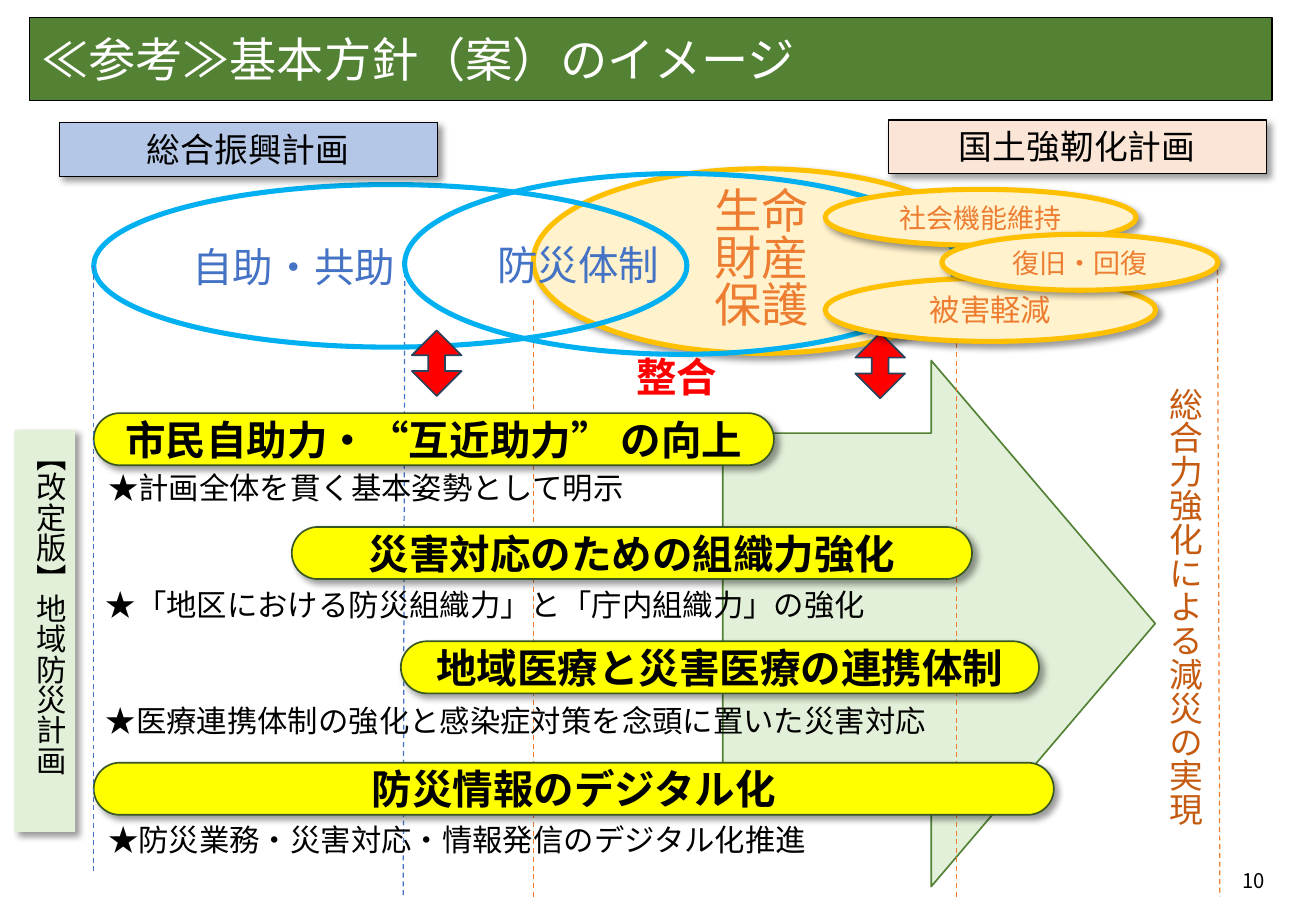
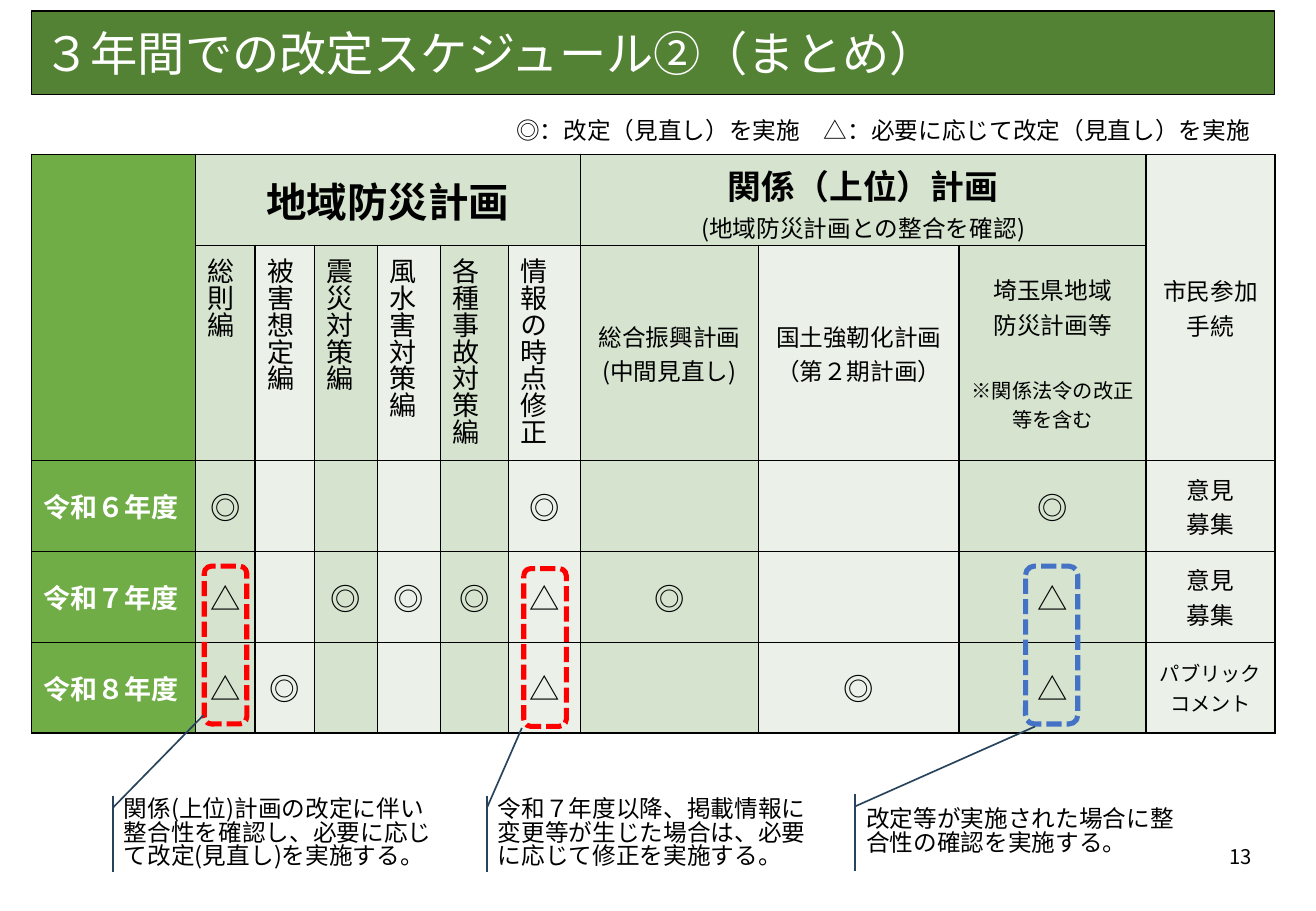
from dataclasses import dataclass

from lxml.etree import SubElement
from pptx import Presentation
from pptx.dml.color import RGBColor
from pptx.enum.dml import MSO_LINE
from pptx.enum.shapes import MSO_CONNECTOR, MSO_SHAPE
from pptx.enum.text import MSO_ANCHOR, PP_ALIGN
from pptx.oxml.ns import qn
from pptx.util import Cm, Pt


@dataclass(frozen=True)
class Theme:
    font: str = "Noto Sans CJK JP"
    black: str = "000000"
    white: str = "FFFFFF"
    title_green: str = "548235"
    head_green: str = "70AD47"
    pale_green: str = "E2F0D9"
    pill_line: str = "385723"
    band_dark: str = "D5E3CF"
    band_light: str = "EBF1E9"
    blue: str = "4472C4"
    cyan: str = "00B0F0"
    pale_blue: str = "B4C7E7"
    navy: str = "28445D"
    orange: str = "ED7D31"
    brown: str = "C55A11"
    pale_orange: str = "FBE5D6"
    gold: str = "FFC000"
    cream: str = "FFF2CC"
    yellow: str = "FFFF00"
    red: str = "FF0000"
    title: int = 28
    large: int = 24
    label: int = 20
    body: int = 18
    medium: int = 16
    small: int = 14
    tiny: int = 12
    tight: float = 0.83


T = Theme()
LEFT, CENTER, RIGHT = PP_ALIGN.LEFT, PP_ALIGN.CENTER, PP_ALIGN.RIGHT
MIDDLE, TOP = MSO_ANCHOR.MIDDLE, MSO_ANCHOR.TOP


def rgb(color):
    return RGBColor.from_string(color)


def style(p, size, color=T.black, bold=False, align=LEFT, spacing=None):
    p.alignment = align
    if spacing:
        p.line_spacing = spacing
    p.font.size = Pt(size)
    p.font.bold = bold
    p.font.color.rgb = rgb(color)
    p.font.name = T.font
    rpr = p._p.get_or_add_pPr().get_or_add_defRPr()
    SubElement(rpr, qn("a:ea"), typeface=T.font)


def write(tf, text, size, color=T.black, bold=False, align=LEFT,
          anchor=MIDDLE, spacing=None, vertical=False):
    tf.word_wrap = True
    tf.vertical_anchor = anchor
    if vertical:
        tf._txBody.bodyPr.set("vert", "eaVert")
    tf.text = text
    for p in tf.paragraphs:
        style(p, size, color, bold, align, spacing)


def add_shadow(sp):
    effects = sp._element.spPr.find(qn("a:effectLst"))
    shadow = SubElement(effects, qn("a:outerShdw"), blurRad=str(Pt(4)),
                        dist=str(Pt(3)), dir=str(45 * 60000),
                        algn="tl", rotWithShape="0")
    color = SubElement(shadow, qn("a:srgbClr"), val=T.black)
    SubElement(color, qn("a:alpha"), val="40000")


def add_figure(s, kind, box, fill=None, line=None, width=1, shadow=False, adj=(), dash=None):
    sp = s.shapes.add_shape(kind, *map(Cm, box))
    sp.shadow.inherit = False
    if fill:
        sp.fill.solid()
        sp.fill.fore_color.rgb = rgb(fill)
    else:
        sp.fill.background()
    if line:
        sp.line.color.rgb = rgb(line)
        sp.line.width = Pt(width)
    else:
        sp.line.fill.background()
    if dash:
        sp.line.dash_style = dash
    for i, value in enumerate(adj):
        sp.adjustments[i] = value
    if shadow:
        add_shadow(sp)
    return sp


def add_text(s, box, text, size, **look):
    tb = s.shapes.add_textbox(*map(Cm, box))
    write(tb.text_frame, text, size, **look)


def add_title(s, x, y, text):
    sp = add_figure(s, MSO_SHAPE.RECTANGLE, (x, y, 25.98, 1.75), T.title_green, T.black, 0.75)
    write(sp.text_frame, text, T.title, T.white)


def add_page_number(s, x, y, number):
    add_text(s, (x, y, 5.77, 1.02), str(number), T.tiny, align=RIGHT)


def add_guide(s, x1, y1, x2, y2, color):
    cx = s.shapes.add_connector(MSO_CONNECTOR.STRAIGHT, *map(Cm, (x1, y1, x2, y2)))
    cx.line.color.rgb = rgb(color)
    cx.line.width = Pt(0.75)
    cx.line.dash_style = MSO_LINE.DASH
    SubElement(cx._element.spPr, qn("a:effectLst"))


def add_gold_oval(s, box, text, size, spacing=None):
    sp = add_figure(s, MSO_SHAPE.FLOWCHART_CONNECTOR, box, T.cream, T.gold, 3, shadow=True)
    write(sp.text_frame, text, size, T.orange, align=CENTER, spacing=spacing)


def add_blue_oval(s, box, text):
    sp = add_figure(s, MSO_SHAPE.FLOWCHART_CONNECTOR, box, None, T.cyan, 3)
    write(sp.text_frame, text, T.large, T.blue)


def add_plan_label(s, x, y, text, fill):
    sp = add_figure(s, MSO_SHAPE.RECTANGLE, (x, y, 7.9, 1.12), fill, T.black, 0.75, shadow=True)
    write(sp.text_frame, text, T.label, align=CENTER, anchor=TOP)


def add_pill(s, x, y, w, text):
    sp = add_figure(s, MSO_SHAPE.ROUNDED_RECTANGLE, (x, y, w, 1.09), T.yellow,
                    T.pill_line, shadow=True, adj=(0.5,))
    write(sp.text_frame, text, T.large, bold=True, align=CENTER)


def add_callout(s, x, y, tip, text):
    sp = add_figure(s, MSO_SHAPE.LINE_CALLOUT_1_ACCENT_BAR, (x, y, 7.01, 1.6),
                    None, T.navy, adj=(0.157, 0.003, *tip))
    write(sp.text_frame, text, T.small, spacing=T.tight)


def build_policy(s):
    add_figure(s, MSO_SHAPE.RIGHT_ARROW, (15.11, 7.54, 9.04, 11), T.pale_green,
               T.title_green, adj=(0.724, 0.518))
    for x in (19.99, 11.15):
        add_guide(s, x, 6.27, x, 18.75, T.orange)
    add_guide(s, 8.46, 5.51, 8.43, 18.75, T.blue)
    add_gold_oval(s, (11.15, 3.53, 9.55, 3.86), "生命\n財産\n保護", T.title, T.tight)
    add_page_number(s, 20.93, 17.91, 10)
    add_title(s, 0.61, 0.36, "≪参考≫基本方針（案）のイメージ")
    add_blue_oval(s, (1.96, 3.86, 12.4, 3.4), "自助・共助")
    add_blue_oval(s, (8.46, 3.63, 11.53, 3.78), "防災体制")
    add_plan_label(s, 1.24, 2.57, "総合振興計画", T.pale_blue)
    add_plan_label(s, 18.57, 2.51, "国土強靭化計画", T.pale_orange)
    for pill in ((1.96, 8.64, 14.22, "市民自助力・“互近助力” の向上"),
                 (8.38, 13.41, 13.34, "地域医療と災害医療の連携体制"),
                 (1.96, 15.95, 20.07, "防災情報のデジタル化"),
                 (6.1, 11.02, 14.22, "災害対応のための組織力強化")):
        add_pill(s, *pill)
    add_guide(s, 1.96, 5.56, 1.96, 18.26, T.blue)
    add_guide(s, 25.45, 5.46, 25.5, 18.75, T.orange)
    bar = add_figure(s, MSO_SHAPE.RECTANGLE, (0.3, 8.99, 1.27, 8.41), T.pale_green, shadow=True)
    write(bar.text_frame, "【改定版】地域防災計画", T.body, align=CENTER, anchor=TOP, vertical=True)
    add_text(s, (12.09, 7.24, 4.11, 1.27), "整合", T.large, color=T.red,
             bold=True, align=CENTER, anchor=TOP)
    for x, y in ((8.61, 6.91), (17.88, 6.96)):
        add_figure(s, MSO_SHAPE.UP_DOWN_ARROW, (x, y, 1.04, 1.37), T.red, T.navy, adj=(0.5, 0.337))
    for x, y, text in ((2.01, 9.68, "★計画全体を貫く基本姿勢として明示"),
                       (1.96, 12.14, "★「地区における防災組織力」と「庁内組織力」の強化"),
                       (1.96, 14.55, "★医療連携体制の強化と感染症対策を念頭に置いた災害対応"),
                       (2.01, 17.04, "★防災業務・災害対応・情報発信のデジタル化推進")):
        add_text(s, (x, y, 18.24, 1.02), text, T.body, anchor=TOP)
    add_text(s, (23.95, 7.85, 1.37, 10.64), "総合力強化による減災の実現", T.label,
             color=T.brown, align=CENTER, anchor=TOP, vertical=True)
    add_gold_oval(s, (17.25, 3.96, 6.5, 1.17), "社会機能維持", T.medium)
    add_gold_oval(s, (17.25, 5.82, 6.91, 1.32), "被害軽減", T.body)
    add_gold_oval(s, (19.69, 4.9, 5.77, 1.17), "復旧・回復", T.medium)


def format_cell(cell, fill):
    cell.vertical_anchor = MIDDLE
    cell.fill.solid()
    cell.fill.fore_color.rgb = rgb(fill)
    tc_pr = cell._tc.get_or_add_tcPr()
    for i, side in enumerate(("a:lnL", "a:lnR", "a:lnT", "a:lnB")):
        ln = SubElement(tc_pr, qn(side), w=str(Pt(1)))
        SubElement(SubElement(ln, qn("a:solidFill")), qn("a:srgbClr"), val=T.black)
        tc_pr.insert(i, ln)


def fill_cell(cell, text, size, color=T.black, bold=False, align=CENTER):
    cell.text_frame.text = text
    for p in cell.text_frame.paragraphs:
        style(p, size, color, bold, align)


def add_detail(cell, text, size, before=0):
    p = cell.text_frame.add_paragraph()
    p.text = text
    p.space_before = Pt(before)
    style(p, size, align=CENTER)


def add_schedule(s):
    widths = (3.43, 1.24, 1.24, 1.32, 1.32, 1.42, 1.5, 3.73, 4.19, 3.91, 2.69)
    heights = (1.9, 4.5, 1.9, 1.9, 1.9)
    frame = s.shapes.add_table(len(heights), len(widths), Cm(0.66), Cm(3.23),
                               Cm(sum(widths)), Cm(sum(heights)))
    tbl = frame.table
    tbl.first_row = tbl.horz_banding = False
    for column, width in zip(tbl.columns, widths):
        column.width = Cm(width)
    for row, height in zip(tbl.rows, heights):
        row.height = Cm(height)
        for c, cell in enumerate(row.cells):
            band = T.band_dark if c % 2 else T.band_light
            format_cell(cell, band if c else T.head_green)
    for start, end in (((0, 0), (1, 0)), ((0, 1), (0, 6)), ((0, 7), (0, 9)), ((0, 10), (1, 10))):
        tbl.cell(*start).merge(tbl.cell(*end))

    fill_cell(tbl.cell(0, 1), "地域防災計画", T.large, bold=True)
    fill_cell(tbl.cell(0, 7), "関係（上位）計画", T.label, bold=True)
    add_detail(tbl.cell(0, 7), "(地域防災計画との整合を確認)", T.small)
    fill_cell(tbl.cell(0, 10), "市民参加\n手続", T.small)
    parts = ("総則編", "被害想定編", "震災対策編", "風水害対策編", "各種事故対策編", "情報の時点修正")
    for c, text in enumerate(parts, 1):
        cell = tbl.cell(1, c)
        fill_cell(cell, text, T.medium, align=LEFT)
        cell._tc.get_or_add_tcPr().set("vert", "eaVert")
    plans = ("総合振興計画\n(中間見直し)", "国土強靭化計画\n（第２期計画）", "埼玉県地域\n防災計画等")
    for c, text in enumerate(plans, 7):
        fill_cell(tbl.cell(1, c), text, T.small)
    add_detail(tbl.cell(1, 9), "※関係法令の改正等を含む", T.tiny, before=20)

    years = (("令和６年度", "◎----◎--◎", "意見\n募集", T.small),
             ("令和７年度", "△-◎◎◎△◎-△", "意見\n募集", T.small),
             ("令和８年度", "△◎---△-◎△", "パブリック\nコメント", T.tiny))
    for r, (year, marks, procedure, size) in enumerate(years, 2):
        fill_cell(tbl.cell(r, 0), year, T.medium, T.white, True, LEFT)
        for c, mark in enumerate(marks, 1):
            if mark != "-":
                fill_cell(tbl.cell(r, c), mark, T.body)
        fill_cell(tbl.cell(r, 10), procedure, size)


def build_schedule(s):
    add_page_number(s, 20.65, 17.4, 13)
    add_title(s, 0.66, 0.23, "３年間での改定スケジュール②（まとめ）")
    add_schedule(s)
    add_text(s, (10.54, 2.29, 16.1, 0.86),
             "◎：改定（見直し）を実施　△：必要に応じて改定（見直し）を実施", T.small, anchor=TOP)
    for x, y, w, color in ((4.27, 11.84, 0.89, T.red), (10.95, 11.89, 0.89, T.red),
                           (21.44, 11.84, 1.09, T.blue)):
        add_figure(s, MSO_SHAPE.ROUNDED_RECTANGLE, (x, y, w, 3.3), None, color, 3,
                   dash=MSO_LINE.SQUARE_DOT)
    add_callout(s, 2.34, 16.64, (-1.052, 0.273),
                "関係(上位)計画の改定に伴い整合性を確認し、必要に応じて改定(見直し)を実施する。")
    add_callout(s, 10.16, 16.64, (-0.886, 0.107),
                "令和７年度以降、掲載情報に変更等が生じた場合は、必要に応じて修正を実施する。")
    add_callout(s, 17.86, 16.61, (-0.886, 0.539),
                "改定等が実施された場合に整合性の確認を実施する。")


def main():
    prs = Presentation()
    prs.slide_width, prs.slide_height = Cm(27.51), Cm(19.05)
    for build in (build_policy, build_schedule):
        build(prs.slides.add_slide(prs.slide_layouts[6]))
    prs.save("out.pptx")


if __name__ == "__main__":
    main()
